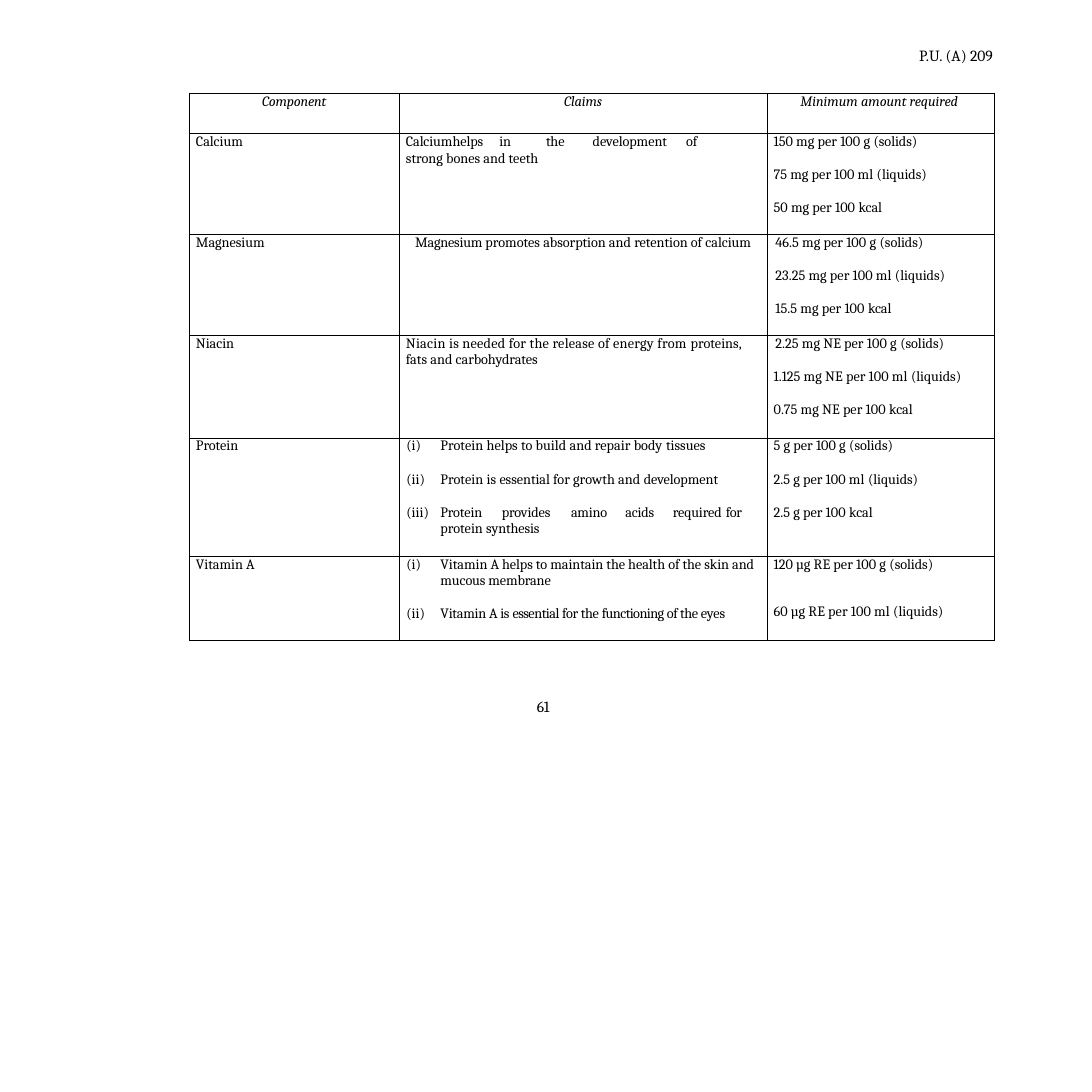
from lxml.etree import SubElement
from pptx import Presentation
from pptx.dml.color import RGBColor
from pptx.enum.text import PP_ALIGN as Align
from pptx.oxml import parse_xml
from pptx.oxml.ns import nsdecls, qn
from pptx.util import Cm, Pt

BLACK = RGBColor(0, 0, 0)
FONT = {"name": "Cambria", "size": Pt(11), "italic": False}
HEADING = {"italic": True}
PAGE_FONT = {"size": Pt(12)}
INDENT = 0.18
WIDE_INDENT = 0.23
ITEM = {"indent": 1.12, "hang": -0.93, "numbered": True}
GAP = 12.6
BREAK = ("\n", 0)

COLUMNS = [5.71, 10, 6.18]
ROWS = [1.09, 2.74, 2.74, 2.8, 3.21, 2.3]


def line(*spans, **layout):
    """Describe a paragraph by its (text, letter spacing) spans and its layout."""
    return {"spans": spans, **layout}


def amounts(*entries, indents=(INDENT, INDENT, INDENT), gap=GAP):
    """Describe the minimum amounts of a component, each with its unit last."""
    return [
        line((amount, 0.03), (unit, -0.1 if unit == "kcal" else -0.05),
             indent=indent, before=gap if number else 0)
        for number, ((amount, unit), indent) in enumerate(zip(entries, indents))
    ]


HEADINGS = [
    [line(("Component", -0.1), align=Align.CENTER)],
    [line(("Claims", -0.1), align=Align.CENTER)],
    [line(("Minimum ", 0), ("amount required", -0.05), indent=0.91)],
]

COMPONENTS = [
    ("Calcium",
     [line(("Calcium\thelps\tin\tthe\t", -0.1), ("development\t", -0.05),
           ("of", -0.1), BREAK, ("strong bones and teeth", 0),
           indent=INDENT, before=1.2, tabs=[2.01, 3.4, 4.22, 5.26, 7.92])],
     amounts(("150 mg per 100 g ", "(solids)"),
             ("75 mg per 100 ml ", "(liquids)"),
             ("50 mg per 100 ", "kcal"))),
    ("Magnesium",
     [line(("Magnesium ", -0.2), ("promotes ", 0), ("absorption ", -0.05),
           ("and ", 0), ("retention ", -0.05), ("of ", 0), ("calcium", -0.05),
           align=Align.CENTER)],
     amounts(("46.5 mg per 100 g ", "(solids)"),
             ("23.25 mg per 100 ml ", "(liquids)"),
             ("15.5 mg per 100 ", "kcal"), indents=[WIDE_INDENT] * 3)),
    ("Niacin",
     [line(("Niacin is needed for the release of energy from ", 0.16),
           ("proteins, ", 0), ("fats and ", 0), ("carbohydrates", -0.05),
           indent=INDENT, right=0.4, before=1.2)],
     amounts(("2.25 mg NE per 100 g ", "(solids)"),
             ("1.125 mg NE per 100 ml ", "(liquids)"),
             ("0.75 mg NE per 100 ", "kcal"),
             indents=[WIDE_INDENT, INDENT, INDENT])),
    ("Protein",
     [line(("Protein helps to build and repair body ", 0.03), ("tissues", 0), **ITEM),
      line(("Protein is ", 0.03), ("essential ", -0.05), ("for growth and ", 0.03),
           ("development", -0.05), before=GAP, **ITEM),
      line(("Protein\tprovides\t", -0.1), ("amino\tacids\t", -0.2),
           ("required\t", -0.1), ("for", -0.2), BREAK, ("protein ", 0),
           ("synthesis", -0.1), before=GAP,
           tabs=[1.12, 2.79, 4.67, 6.15, 7.44, 8.95], **ITEM)],
     amounts(("5 g per 100 g ", "(solids)"),
             ("2.5 g per 100 ml ", "(liquids)"),
             ("2.5 g per 100 ", "kcal"))),
    ("Vitamin A",
     [line(("Vitamin A helps to maintain the health of the skin and ", -0.05),
           ("mucous membrane", -0.1), **ITEM),
      line(("Vitamin A is ", -0.2), ("essential ", -0.4), ("for the ", -0.25),
           ("functioning ", -0.45), ("of the ", -0.3), ("eyes", -0.1),
           before=12.2, **ITEM)],
     amounts(("120 µg RE per 100 g ", "(solids)"),
             ("60 µg RE per 100 ml ", "(liquids)"), gap=23.8)),
]


def apply(target, values):
    """Set the attributes of an object from a dict."""
    for name, value in values.items():
        setattr(target, name, value)


def write_spans(para, spans, font):
    """Add spans of text with their letter spacing to a paragraph."""
    for text, spacing in spans:
        if (text, spacing) == BREAK:
            para.add_line_break()
            continue
        span = para.add_run()
        span.text = text
        apply(span.font, FONT | font)
        span.font.color.rgb = BLACK
        span._r.get_or_add_rPr().set("spc", str(round(spacing * 100)))


def write_line(para, content, font):
    """Fill a table paragraph with its layout, numbering, tabs and text."""
    apply(para, {"alignment": content.get("align", Align.LEFT),
                 "line_spacing": Pt(12.9),
                 "space_before": Pt(content.get("before", 0))})
    layout = para._p.get_or_add_pPr()
    for name, key in {"marL": "indent", "marR": "right", "indent": "hang"}.items():
        layout.set(name, str(Cm(content.get(key, 0))))
    if content.get("numbered"):
        SubElement(layout, qn("a:buAutoNum"), type="romanLcParenBoth")
    if "tabs" in content:
        stops = SubElement(layout, qn("a:tabLst"))
        for stop in content["tabs"]:
            SubElement(stops, qn("a:tab"), pos=str(Cm(stop)), algn="l")
    write_spans(para, content["spans"], font)


def draw_borders(cell):
    """Give a clear cell thin black lines on all four sides."""
    cell.fill.background()
    for place, side in enumerate("LRTB"):
        border = parse_xml(
            f'<a:ln{side} {nsdecls("a")} w="{Pt(0.5)}"><a:solidFill>'
            f'<a:srgbClr val="{BLACK}"/></a:solidFill></a:ln{side}>')
        cell._tc.get_or_add_tcPr().insert(place, border)


def fill_cell(cell, lines, font):
    """Write the lines of a table cell and draw its borders."""
    apply(cell, dict.fromkeys(
        ["margin_left", "margin_right", "margin_top", "margin_bottom"], 0))
    frame = cell.text_frame
    for number, content in enumerate(lines):
        para = frame.add_paragraph() if number else frame.paragraphs[0]
        write_line(para, content, font)
    draw_borders(cell)


def add_claims_table(page):
    """Add the table of components, claims and minimum amounts."""
    table = page.shapes.add_table(len(ROWS), len(COLUMNS), Cm(5.15), Cm(2.54),
                                  Cm(sum(COLUMNS)), Cm(sum(ROWS))).table
    apply(table, {"first_row": False, "horz_banding": False})
    for column, width in zip(table.columns, COLUMNS):
        column.width = Cm(width)
    for row, height in zip(table.rows, ROWS):
        row.height = Cm(height)
    contents = [HEADINGS] + [
        [[line((name, -0.05), indent=INDENT)], claims, minimums]
        for name, claims, minimums in COMPONENTS]
    for row_number, (row, cells) in enumerate(zip(table.rows, contents)):
        for cell, lines in zip(row.cells, cells):
            fill_cell(cell, lines, {} if row_number else HEADING)


def add_label(page, left, top, width, height, before, indent, *spans):
    """Add a single line of text outside the table."""
    box = page.shapes.add_textbox(Cm(left), Cm(top), Cm(width), Cm(height))
    apply(box.text_frame, {"word_wrap": True, "margin_left": 0, "margin_right": 0,
                           "margin_top": Cm(0.03), "margin_bottom": 0})
    para = box.text_frame.paragraphs[0]
    para.space_before = Pt(before)
    para._p.get_or_add_pPr().set("marL", str(Cm(indent)))
    write_spans(para, spans, PAGE_FONT)


def main():
    """Build the page and save the deck."""
    deck = Presentation()
    apply(deck, {"slide_width": Cm(29.7), "slide_height": Cm(29.7)})
    page = deck.slides.add_slide(deck.slide_layouts[6])
    add_label(page, 14.5, 18.94, 0.71, 0.84, 0.4, 0.1, ("61", -0.1))
    add_label(page, 24.97, 1.22, 2.24, 0.58, 1, 0.03, ("P.U. (A) ", 0), ("209", -0.1))
    add_claims_table(page)
    deck.save("out.pptx")


if __name__ == "__main__":
    main()
